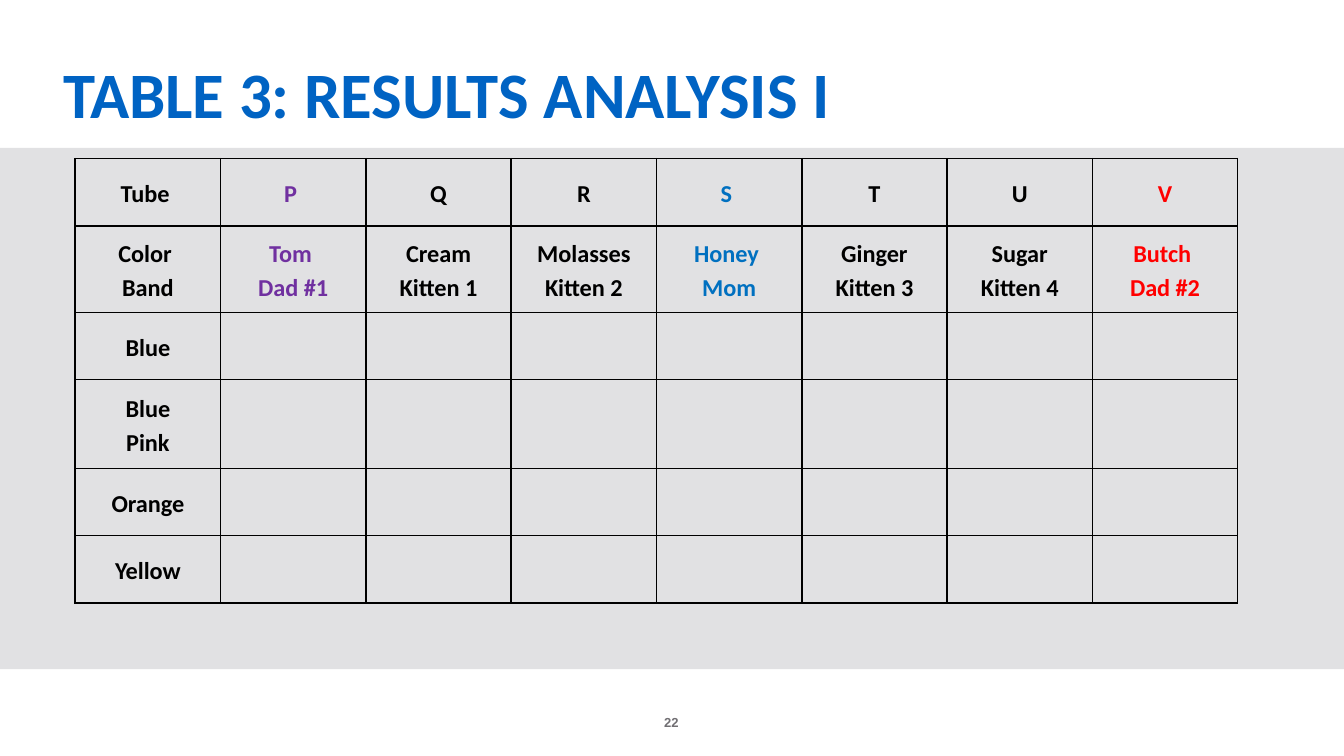
import pptx
import pptx.util
import pptx.dml.color
import pptx.enum.shapes
import pptx.enum.text
import pptx.oxml
import pptx.oxml.ns

Inches, Pt = pptx.util.Inches, pptx.util.Pt
RGB = pptx.dml.color.RGBColor
ALIGN = pptx.enum.text.PP_ALIGN
ANCHOR = pptx.enum.text.MSO_ANCHOR

SLIDE_WIDTH = 10
SLIDE_HEIGHT = SLIDE_WIDTH * 9 / 16

TITLE_BLUE = RGB(0x00, 0x63, 0xC3)
BAND_GRAY = RGB(0xE1, 0xE1, 0xE3)
NUMBER_GRAY = RGB(0x71, 0x6F, 0x73)
BLACK = RGB(0x00, 0x00, 0x00)
PURPLE = RGB(0x70, 0x30, 0xA0)
BLUE = RGB(0x00, 0x70, 0xC0)
RED = RGB(0xFF, 0x00, 0x00)

# Cell text; lines of one cell are separate paragraphs
ROWS = [
    ["Tube ", "P ", "Q", "R", "S ", "T", "U", "V"],
    ["Color \nBand", "Tom \nDad #1", "Cream\nKitten 1", "Molasses\nKitten 2",
     "Honey \nMom", "Ginger\nKitten 3", "Sugar\nKitten 4", "Butch \nDad #2"],
    ["Blue"],
    ["Blue\nPink"],
    ["Orange"],
    ["Yellow"],
]
ROW_HEIGHTS = [0.5, 0.64, 0.5, 0.66, 0.5, 0.5]
TABLE_WIDTH = 8.65
PARENT_COLORS = {1: PURPLE, 4: BLUE, 7: RED}


class SlideBuilder:
    def __init__(self, slide, font="Calibri"):
        self.slide = slide
        self.font = font

    def style(self, p, size, color, align, font=None):
        p.alignment = align
        p.font.name = font or self.font
        p.font.size = Pt(size)
        p.font.bold = True
        p.font.color.rgb = color

    def frame(self, tf, anchor, x_margin, y_margin):
        tf.word_wrap = True
        tf.auto_size = pptx.enum.text.MSO_AUTO_SIZE.NONE
        tf.vertical_anchor = anchor
        tf.margin_left = tf.margin_right = Inches(x_margin)
        tf.margin_top = tf.margin_bottom = Inches(y_margin)

    def band(self, x, y, w, h, color):
        sp = self.slide.shapes.add_shape(
            pptx.enum.shapes.MSO_SHAPE.RECTANGLE,
            Inches(x), Inches(y), Inches(w), Inches(h))
        sp.shadow.inherit = False
        sp.fill.solid()
        sp.fill.fore_color.rgb = color
        sp.line.fill.background()

    def title(self, text, x, y, w, h):
        sp = self.slide.shapes.title
        sp.left, sp.top, sp.width, sp.height = map(Inches, (x, y, w, h))
        tf = sp.text_frame
        tf.text = text
        self.frame(tf, ANCHOR.BOTTOM, 0.07, 0.04)
        self.style(tf.paragraphs[0], 34.7, TITLE_BLUE, ALIGN.LEFT)

    def number(self, text, x, y, w, h):
        sp = self.slide.shapes.add_textbox(
            Inches(x), Inches(y), Inches(w), Inches(h))
        tf = sp.text_frame
        tf.text = text
        self.frame(tf, ANCHOR.BOTTOM, 0, 0)
        self.style(tf.paragraphs[0], 7, NUMBER_GRAY, ALIGN.CENTER, "Arial")

    def borders(self, cell):
        tc_pr = cell._tc.get_or_add_tcPr()
        for side in ("lnL", "lnR", "lnT", "lnB"):
            tc_pr.append(pptx.oxml.parse_xml(
                f'<a:{side} {pptx.oxml.ns.nsdecls("a")} w="{Pt(1)}">'
                f'<a:solidFill><a:srgbClr val="{BLACK}"/></a:solidFill>'
                f'</a:{side}>'))

    def cell(self, cell, text, color):
        self.borders(cell)
        cell.fill.background()
        cell.vertical_anchor = ANCHOR.MIDDLE
        cell.margin_left = cell.margin_right = Inches(0.07)
        cell.margin_top = cell.margin_bottom = Inches(0.07)
        cell.text = text
        for p in cell.text_frame.paragraphs:
            p.line_spacing = 1.15
            self.style(p, 13, color, ALIGN.CENTER)

    def table(self, x, y, width, rows, heights, colors):
        columns = len(rows[0])
        table = self.slide.shapes.add_table(
            len(rows), columns, Inches(x), Inches(y),
            Inches(width), Inches(sum(heights))).table
        table.first_row = table.horz_banding = False
        for r, (texts, height) in enumerate(zip(rows, heights)):
            table.rows[r].height = Inches(height)
            for c in range(columns):
                text = texts[c] if c < len(texts) else ""
                self.cell(table.cell(r, c), text, colors.get(c, BLACK))


def main():
    prs = pptx.Presentation()
    prs.slide_width = Inches(SLIDE_WIDTH)
    prs.slide_height = Inches(SLIDE_HEIGHT)
    s = SlideBuilder(prs.slides.add_slide(prs.slide_layouts[5]))

    # Background band and title
    s.band(0, 1.1, SLIDE_WIDTH, 3.88, BAND_GRAY)
    s.title("TABLE 3: RESULTS ANALYSIS I", 0.4, 0.36, 9.2, 0.66)

    # Results table
    s.table(0.56, 1.18, TABLE_WIDTH, ROWS, ROW_HEIGHTS, PARENT_COLORS)

    # Slide number
    s.number("22", 4.54, 5.13, 0.91, 0.3)

    prs.save("out.pptx")


if __name__ == "__main__":
    main()
